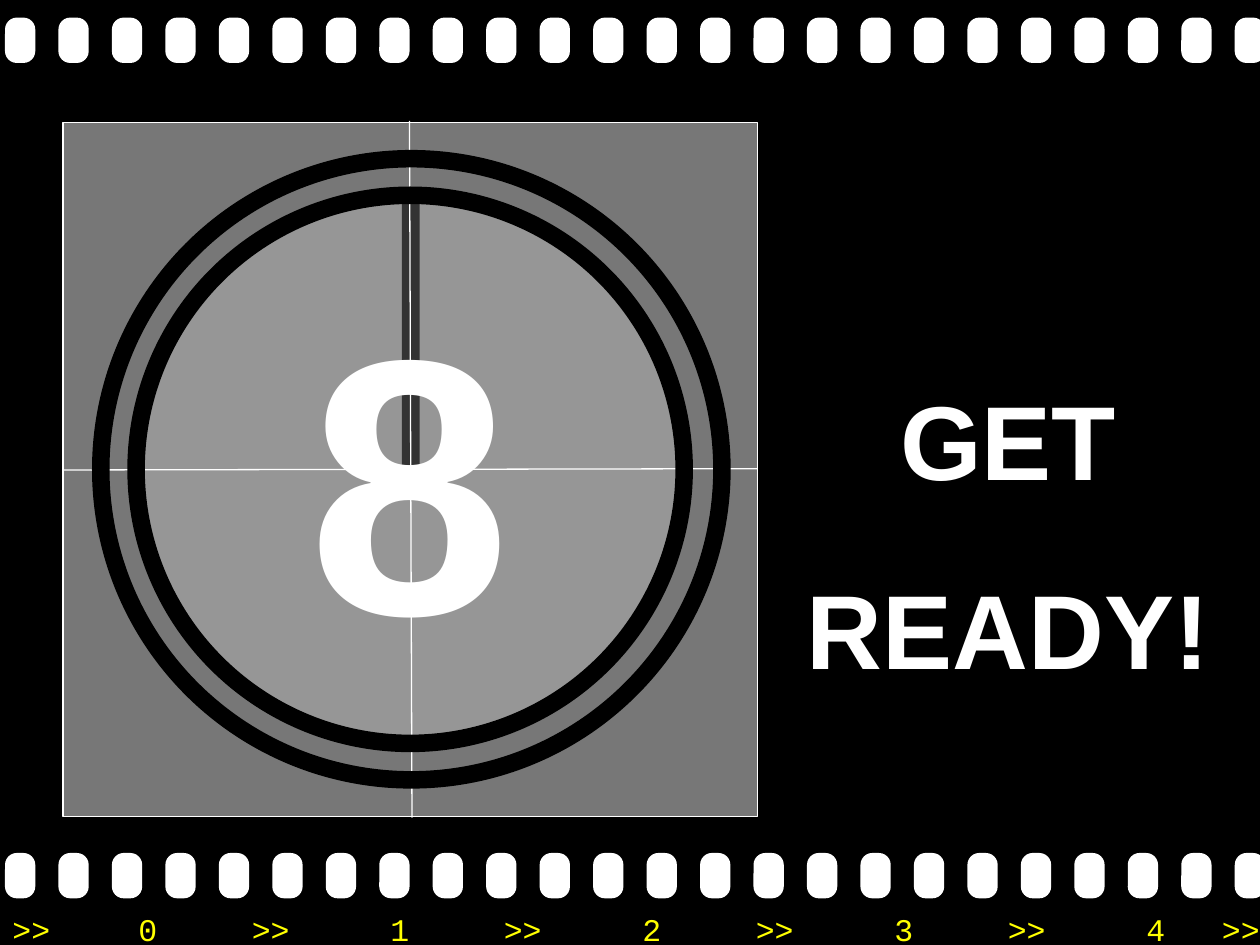
from lxml.etree import SubElement
from pptx import Presentation
from pptx.dml.color import RGBColor as Rgb
from pptx.enum.shapes import MSO_CONNECTOR as Link, MSO_SHAPE as Kind
from pptx.enum.text import MSO_ANCHOR as Anchor, MSO_AUTO_SIZE as Fit, PP_ALIGN as Align
from pptx.oxml.ns import qn
from pptx.util import Inches, Pt

COLORS = {
    "black": "000000", "white": "FFFFFF", "yellow": "FFFF00",
    "frame": "777777", "disc": "969696", "hand": "333333",
}
COLS, ROWS = 100, 75
HOLES = 24
PITCH = 97.6 / (HOLES - 1)


class Reel:
    """Draws on one slide; lengths are columns and rows of a 100 by 75 grid."""

    def __init__(self, deck):
        self.col = deck.slide_width / COLS
        self.row = deck.slide_height / ROWS
        self.slide = deck.slides.add_slide(deck.slide_layouts[5])
        self.shapes = self.slide.shapes
        back = self.slide.background.fill
        back.solid()
        back.fore_color.rgb = self.color("black")

    def color(self, name):
        return Rgb.from_string(COLORS[name])

    def spot(self, *nums):
        """Turn alternating columns and rows into slide lengths."""
        return [round(n * (self.row if i % 2 else self.col))
                for i, n in enumerate(nums)]

    def stroke(self, line, name, width):
        line.color.rgb = self.color(name)
        line.width = Pt(width)

    def shape(self, kind, box, fill=None, line=None, width=0.75):
        item = self.shapes.add_shape(kind, *self.spot(*box))
        item.shadow.inherit = False
        if fill:
            item.fill.solid()
            item.fill.fore_color.rgb = self.color(fill)
        else:
            item.fill.background()
        if line:
            self.stroke(item.line, line, width)
        else:
            item.line.fill.background()
        return item

    def line(self, *ends):
        item = self.shapes.add_connector(Link.STRAIGHT, *self.spot(*ends))
        self.stroke(item.line, "white", 0.75)
        SubElement(item._element.spPr, qn("a:effectLst"))

    def label(self, item, text, size, face="Arial", color="white",
              bold=True, align=Align.CENTER, wrap=True, anchor=Anchor.TOP):
        frame = item.text_frame
        frame.word_wrap = wrap
        frame.auto_size = Fit.NONE
        frame.vertical_anchor = anchor
        para = frame.paragraphs[0]
        para.text = text
        para.alignment = align
        font = para.font
        font.name, font.size, font.bold = face, Pt(size), bold
        font.color.rgb = self.color(color)
        return para

    def title(self, text, box, size):
        item = self.shapes.title
        item.left, item.top, item.width, item.height = self.spot(*box)
        self.label(item, text, size).line_spacing = 1.5

    def holes(self, top):
        for i in range(HOLES):
            hole = self.shape(Kind.ROUNDED_RECTANGLE,
                              (0.4 + i * PITCH, top, 2.4, 3.6), "white")
            hole.adjustments[0] = 0.39

    def strip(self, words, stops, box):
        """Put words on one line, each after the first at a tab stop in inches."""
        item = self.shapes.add_textbox(*self.spot(*box))
        para = self.label(item, "\t".join(words), 18, "Courier New", "yellow",
                          False, Align.LEFT)
        props = para._p.get_or_add_pPr()
        tabs = props.makeelement(qn("a:tabLst"), {})
        for stop in stops:
            SubElement(tabs, qn("a:tab"), pos=str(Inches(stop)), algn="l")
        props.insert_element_before(tabs, "a:defRPr", "a:extLst")


def main():
    deck = Presentation()
    deck.slide_width, deck.slide_height = Inches(10), Inches(7.5)
    reel = Reel(deck)

    for top in (67.7, 1.4):
        reel.holes(top)
    words, stops = [">>"], []
    for n in range(5):
        words += [str(n), ">>"]
        stops += [2 * n + 1, 2 * n + 1.9]
    stops[-1] = 9.6
    reel.strip(words, stops, (0, 71.7, 102, 4))

    reel.shape(Kind.RECTANGLE, (5, 9.7, 55.1, 55.1), "frame", "white")
    reel.shape(Kind.OVAL, (11, 15.5, 43.2, 43.5), "disc", "white")
    reel.shape(Kind.RECTANGLE, (31.9, 15.6, 1.4, 21.6), "hand")
    reel.line(32.5, 9.6, 32.7, 64.9)
    reel.line(60.1, 37.2, 5, 37.3)
    ring = reel.shape(Kind.OVAL, (10.8, 15.5, 43.5, 43.5), None, "black", 10)
    reel.label(ring, "8", 208, wrap=False, anchor=Anchor.MIDDLE)
    reel.shape(Kind.OVAL, (8, 12.6, 49.3, 49.3), None, "black", 10)

    reel.title("GET READY!", (62.6, 24.3, 34.8, 21.7), 60)
    deck.save("out.pptx")


if __name__ == "__main__":
    main()
